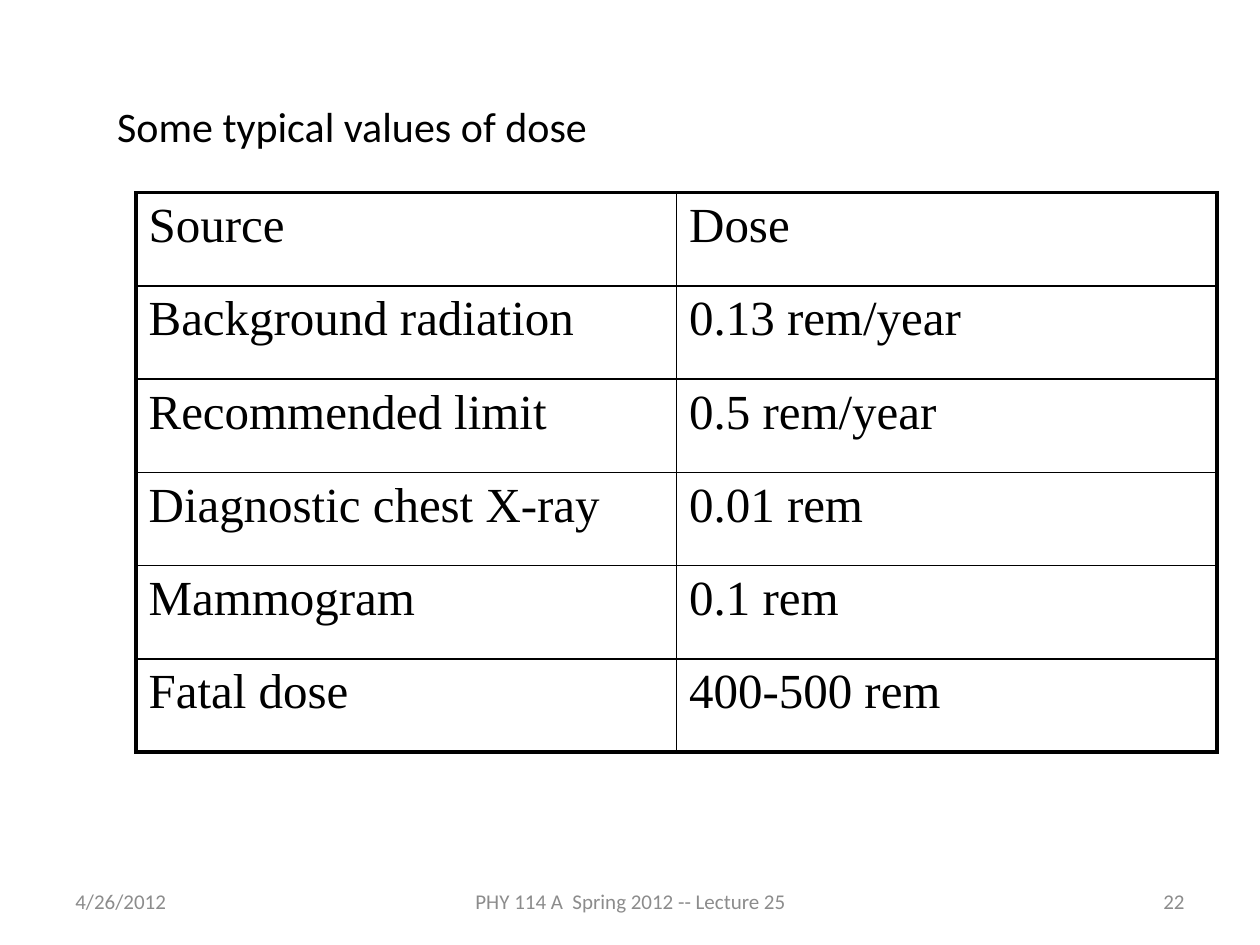
from lxml import etree
from pptx import Presentation
from pptx.dml.color import RGBColor
from pptx.enum.text import MSO_ANCHOR, PP_ALIGN
from pptx.oxml.ns import qn
from pptx.util import Inches, Pt

LEFT, CENTER, RIGHT = PP_ALIGN.LEFT, PP_ALIGN.CENTER, PP_ALIGN.RIGHT
TOP, MIDDLE = MSO_ANCHOR.TOP, MSO_ANCHOR.MIDDLE
TITLE_ONLY = 5

DOSES = [
    ("Source", "Dose"),
    ("Background radiation", "0.13 rem/year"),
    ("Recommended limit", "0.5 rem/year"),
    ("Diagnostic chest X-ray", "0.01 rem"),
    ("Mammogram", "0.1 rem"),
    ("Fatal dose", "400-500 rem"),
]
FOOTERS = [
    ("4/26/2012", 0.5, 2.33, LEFT),
    ("PHY 114 A  Spring 2012 -- Lecture 25", 3.42, 3.17, CENTER),
    ("22", 7.17, 2.33, RIGHT),
]


def color(value):
    return RGBColor.from_string(value)


class SlideBuilder:
    body_font, table_font = "Calibri", "Times New Roman"
    ink, gray = "000000", "8C8C8C"
    inner_line, outer_line = 1, 2.25

    def __init__(self, deck):
        self.slide = deck.slides.add_slide(deck.slide_layouts[TITLE_ONLY])

    def set_text(self, frame, text, size, font, ink, align=LEFT):
        frame.text = text
        para = frame.paragraphs[0]
        para.alignment = align
        span = para.runs[0]
        span.font.size, span.font.name = Pt(size), font
        span.font.color.rgb = color(ink)

    def title(self, text, left, top, width, height):
        box = self.slide.shapes.title
        box.left, box.top = Inches(left), Inches(top)
        box.width, box.height = Inches(width), Inches(height)
        box.text_frame.vertical_anchor = TOP
        self.set_text(box.text_frame, text, 24, self.body_font, self.ink)

    def footer(self, text, left, width, align):
        box = self.slide.shapes.add_textbox(
            Inches(left), Inches(6.95), Inches(width), Inches(0.4))
        frame = box.text_frame
        frame.word_wrap = True
        frame.vertical_anchor = MIDDLE
        self.set_text(frame, text, 12, self.body_font, self.gray, align)

    def borders(self, cell, outer_sides):
        properties = cell._tc.get_or_add_tcPr()
        for index, side in enumerate("LRTB"):
            points = self.outer_line if side in outer_sides else self.inner_line
            line = etree.Element(qn(f"a:ln{side}"), w=str(Pt(points)))
            fill = etree.SubElement(line, qn("a:solidFill"))
            etree.SubElement(fill, qn("a:srgbClr"), val=self.ink)
            properties.insert(index, line)

    def table(self, rows, left, top, column_width, row_height):
        row_count, column_count = len(rows), len(rows[0])
        table = self.slide.shapes.add_table(
            row_count, column_count, Inches(left), Inches(top),
            Inches(column_width * column_count),
            Inches(row_height * row_count)).table
        table.first_row = table.horz_banding = False
        for column in table.columns:
            column.width = Inches(column_width)
        for r, values in enumerate(rows):
            table.rows[r].height = Inches(row_height)
            for c, value in enumerate(values):
                cell = table.cell(r, c)
                cell.fill.background()
                self.set_text(cell.text_frame, value, 28, self.table_font, self.ink)
                edges = {"L": c == 0, "R": c == column_count - 1,
                         "T": r == 0, "B": r == row_count - 1}
                self.borders(cell, [side for side in edges if edges[side]])


def main():
    deck = Presentation()
    deck.slide_width, deck.slide_height = Inches(10), Inches(7.5)
    builder = SlideBuilder(deck)

    # Footer line
    for footer in FOOTERS:
        builder.footer(*footer)

    # Heading and dose table
    builder.title("Some typical values of dose", 0.83, 0.75, 8.42, 0.5)
    builder.table(DOSES, 1.08, 1.53, 4.29, 0.74)

    deck.save("out.pptx")


if __name__ == "__main__":
    main()
